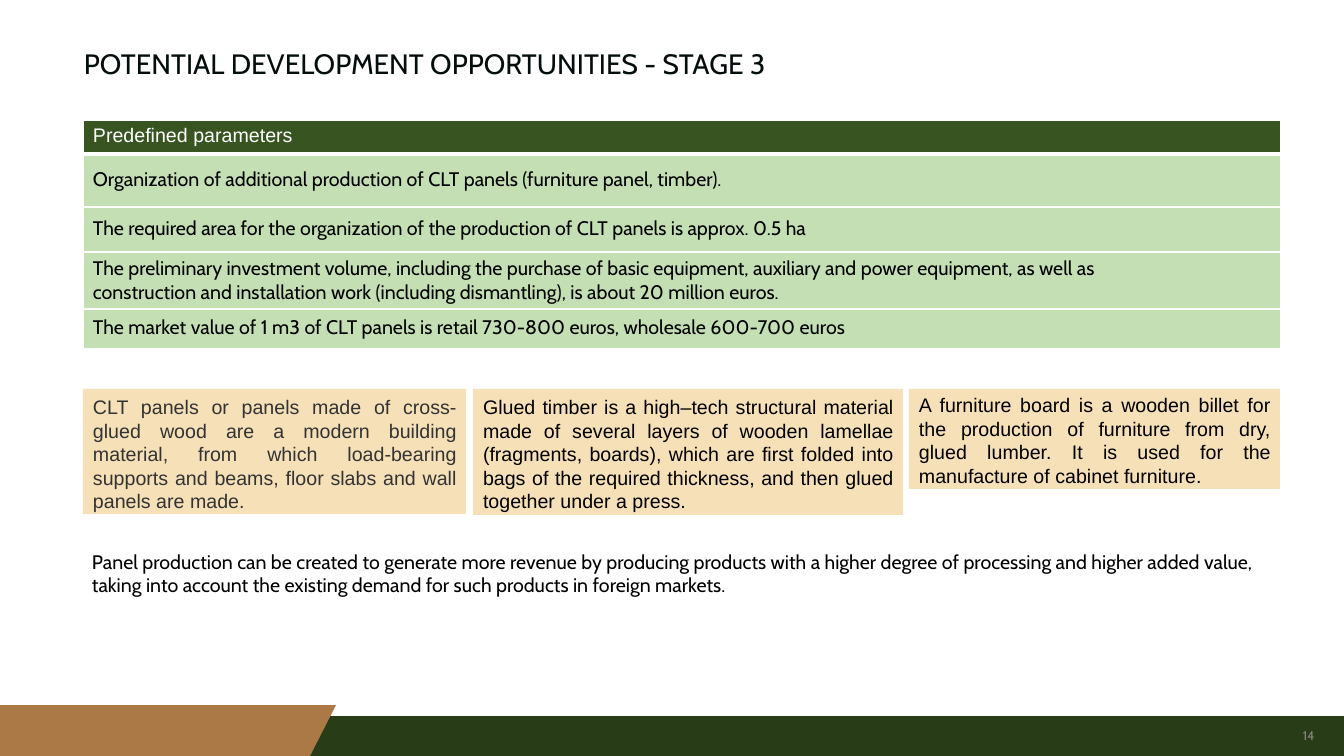
from lxml import etree
from pptx import Presentation
from pptx.dml.color import RGBColor
from pptx.enum.shapes import MSO_SHAPE
from pptx.enum.text import MSO_ANCHOR, PP_ALIGN
from pptx.oxml.ns import qn
from pptx.util import Pt

PX = 914400 / 100.8
RECTANGLE = MSO_SHAPE.RECTANGLE
TOP = MSO_ANCHOR.TOP
LEFT, JUSTIFY = PP_ALIGN.LEFT, PP_ALIGN.JUSTIFY
COLORS = {
    "title": "040E0D", "black": "000000", "white": "FFFFFF", "gray": "333333",
    "number": "878787", "header": "385521", "row": "C5DFB4", "card": "F5E0B8",
    "green": "283D17", "brown": "AB7946",
}


def px(*lengths):
    return [round(length * PX) for length in lengths]


def write(holder, frame, text, font, size, color, margins, before, align=LEFT, spacing=None):
    for side, margin in zip(("left", "top", "right", "bottom"), px(*margins)):
        setattr(holder, f"margin_{side}", margin)
    holder.vertical_anchor = TOP
    frame.word_wrap = True
    para = frame.paragraphs[0]
    paragraph_format = {"alignment": align, "space_before": Pt(before), "line_spacing": spacing}
    for name, value in paragraph_format.items():
        setattr(para, name, value)
    span = para.add_run()
    span.text = text
    for name, value in {"name": font, "size": Pt(size), "bold": False}.items():
        setattr(span.font, name, value)
    span.font.color.rgb = RGBColor.from_string(COLORS[color])


deck = Presentation()
deck.slide_width, deck.slide_height = px(1344, 756)
page = deck.slides.add_slide(deck.slide_layouts[6])

title = page.shapes.add_textbox(*px(83, 46, 1085, 35)).text_frame
write(title, title, "POTENTIAL DEVELOPMENT OPPORTUNITIES - STAGE 3",
      "Cabin", 20, "title", (1, 1, 0, 0), 1)

footer_bands = [
    ("green", [(1344, 716), (296, 716), (296, 756), (1344, 756)]),
    ("brown", [(336, 705), (0, 705), (0, 756), (310, 756)]),
]
for color, points in footer_bands:
    builder = page.shapes.build_freeform(*points[0], scale=PX)
    builder.add_line_segments(points[1:], close=True)
    band = builder.convert_to_shape()
    band.shadow.inherit = False
    band.fill.solid()
    band.fill.fore_color.rgb = RGBColor.from_string(COLORS[color])
    band.line.fill.background()

parameters = [
    ("Predefined parameters", 33, 4, 2.5, 3),
    ("Organization of additional production of CLT panels (furniture panel, timber).",
     53, 14, 10.1, 1.5),
    ("The required area for the organization of the production of CLT panels is approx. 0.5 ha",
     45, 10, 7.5, 1),
    ("The preliminary investment volume, including the purchase of basic equipment, "
     "auxiliary and power equipment, as well as construction and installation work "
     "(including dismantling), is about 20 million euros.", 57, 5, 3.4, 1.5),
    ("The market value of 1 m3 of CLT panels is retail 730-800 euros, wholesale 600-700 euros",
     39, 7, 5.2, 0),
]
table = page.shapes.add_table(len(parameters), 1, *px(83, 121, 1198, 227)).table
table.first_row = table.horz_banding = False
border_above = 0
for index, (text, height, inset, before, border_below) in enumerate(parameters):
    table.rows[index].height = px(height)[0]
    cell = table.cell(index, 0)
    font, color, fill = ("Cabin", "black", "row") if index else ("Arial", "white", "header")
    write(cell, cell.text_frame, text, font, 14, color, (10, inset, 120, 0), before)
    cell.fill.solid()
    cell.fill.fore_color.rgb = RGBColor.from_string(COLORS[fill])
    properties = cell._tc.get_or_add_tcPr()
    borders = [("a:lnT", border_above), ("a:lnB", border_below)]
    for position, (tag, width) in enumerate(borders):
        border = etree.Element(qn(tag), w=str(Pt(width)))
        if width:
            paint = etree.SubElement(border, qn("a:solidFill"))
            etree.SubElement(paint, qn("a:srgbClr"), val=COLORS["white"])
        else:
            etree.SubElement(border, qn("a:noFill"))
        properties.insert(position, border)
    border_above = border_below

number = page.shapes.add_textbox(*px(1299, 728, 22, 17)).text_frame
write(number, number, "14", "Cabin", 9, "number", (4, 0, 0, 0), 0.3)

boxes = [
    ("CLT panels or panels made of cross-glued wood are a modern building material, "
     "from which load-bearing supports and beams, floor slabs and wall panels are made.",
     (83, 389, 383, 125), "card", "Arial", "gray", 6, 4, JUSTIFY, 1.0),
    ("Glued timber is a high–tech structural material made of several layers of wooden "
     "lamellae (fragments, boards), which are first folded into bags of the required "
     "thickness, and then glued together under a press.",
     (473, 389, 430, 126), "card", "Arial", "black", 6, 4.7, JUSTIFY, 1.0),
    ("A furniture board is a wooden billet for the production of furniture from dry, "
     "glued lumber. It is used for the manufacture of cabinet furniture.",
     (909, 389, 371, 100), "card", "Arial", "black", 4, 3.2, JUSTIFY, 1.0),
    ("Panel production can be created to generate more revenue by producing products with "
     "a higher degree of processing and higher added value, taking into account the "
     "existing demand for such products in foreign markets.",
     (82, 544, 1198, 53), None, "Cabin", "black", 6, 4.2, LEFT, Pt(16.7)),
]
for text, place, fill, font, color, inset, before, align, spacing in boxes:
    box = page.shapes.add_shape(RECTANGLE, *px(*place))
    box.shadow.inherit = False
    if fill:
        box.fill.solid()
        box.fill.fore_color.rgb = RGBColor.from_string(COLORS[fill])
        box.line.fill.background()
    else:
        box.fill.background()
        box.line.color.rgb = RGBColor.from_string(COLORS["white"])
        box.line.width = Pt(0.72)
    frame = box.text_frame
    write(frame, frame, text, font, 14, color, (10, inset, 9, 0), before, align, spacing)

deck.save("out.pptx")
